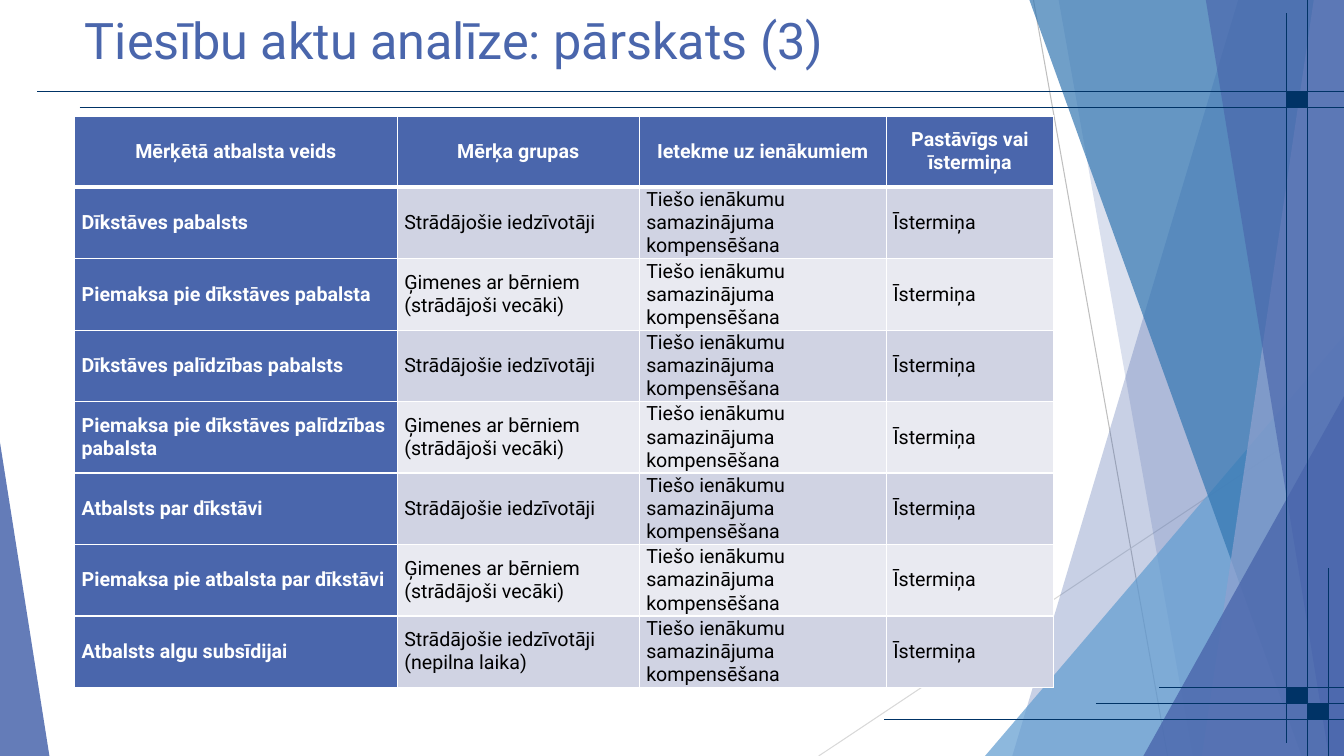
from dataclasses import dataclass

from lxml import etree
from pptx import Presentation
from pptx import util as u
from pptx.dml.color import RGBColor
from pptx.enum import shapes, text
from pptx.oxml.ns import qn


@dataclass(frozen=True)
class Theme:
    """Colours, type sizes and font of the deck."""
    blue: str = "4A66AC"
    pale_blue: str = "90A2CF"
    sky: str = "629DD1"
    ocean: str = "3477B2"
    navy: str = "003366"
    grey: str = "BFBFBF"
    light_grey: str = "D9D9D9"
    white: str = "FFFFFF"
    black: str = "000000"
    bands: tuple = ("D0D3E3", "E9EAF1")
    font: str = "Roboto"
    title_size: int = 36
    table_size: int = 14


THEME = Theme()
WIDTH, HEIGHT = 13.33, 7.5
HEADERS = ["Mērķētā atbalsta veids", "Mērķa grupas", "Ietekme uz ienākumiem", "Pastāvīgs vai īstermiņa"]
WORKERS = "Strādājošie iedzīvotāji"
FAMILIES = "Ģimenes ar bērniem (strādājoši vecāki)"
EFFECT = "Tiešo ienākumu samazinājuma kompensēšana"
DURATION = "Īstermiņa"
SUPPORT = [
    ("Dīkstāves pabalsts", WORKERS),
    ("Piemaksa pie dīkstāves pabalsta", FAMILIES),
    ("Dīkstāves palīdzības pabalsts", WORKERS),
    ("Piemaksa pie dīkstāves palīdzības pabalsta", FAMILIES),
    ("Atbalsts par dīkstāvi", WORKERS),
    ("Piemaksa pie atbalsta par dīkstāvi", FAMILIES),
    ("Atbalsts algu subsīdijai", "Strādājošie iedzīvotāji (nepilna laika)"),
]


def apply_format(target, values):
    """Set each attribute of the target from a dict."""
    for name, value in values.items():
        setattr(target, name, value)


def format_font(font, size, color, bold=False):
    """Apply the theme font with a size, colour and weight."""
    apply_format(font, {"name": THEME.font, "size": u.Pt(size), "bold": bold})
    font.color.rgb = RGBColor.from_string(color)


def fill_shape(shape, color, opacity=100):
    """Give a shape a plain fill of the given opacity and no shadow."""
    shape.shadow.inherit = False
    shape.fill.solid()
    shape.fill.fore_color.rgb = RGBColor.from_string(color)
    shape.line.fill.background()
    if opacity < 100:
        color_element = shape.fill._xPr.find(qn("a:solidFill"))[0]
        etree.SubElement(color_element, qn("a:alpha"), val=str(opacity * 1000))


def add_rule(group, start, end, color):
    """Draw a thin straight line between two points."""
    line = group.shapes.add_connector(shapes.MSO_CONNECTOR.STRAIGHT, *map(u.Inches, start + end))
    line.line.color.rgb = RGBColor.from_string(color)
    line.line.width = u.Pt(0.75)
    etree.SubElement(line._element.spPr, qn("a:effectLst"))


def add_facet(group, box, top_left, bottom_left, color, opacity):
    """Add a full-height facet that ends at the right edge of the box."""
    left, top, width, height = box
    right, bottom = left + width, top + height
    corners = [(top_left, top), (right, top), (right, bottom), (bottom_left, bottom)]
    points = [tuple(map(u.Inches, corner)) for corner in corners]
    builder = group.shapes.build_freeform(*points[0])
    builder.add_line_segments(points[1:], close=True)
    fill_shape(builder.convert_to_shape(), color, opacity)


def add_corner(group, box, width, height, peak, color, opacity):
    """Add a triangle in a bottom corner, with its peak at 0 (left) or 1 (right)."""
    left, top, box_width, box_height = box
    place = (left + peak * (box_width - width), top + box_height - height, width, height)
    shape = group.shapes.add_shape(shapes.MSO_SHAPE.ISOSCELES_TRIANGLE, *map(u.Inches, place))
    shape.adjustments[0] = peak
    fill_shape(shape, color, opacity)


def add_facets(slide, box):
    """Draw the translucent facets at the sides of the box."""
    left, top, width, height = box
    right, bottom = left + width, top + height
    group = slide.shapes.add_group_shape()
    add_rule(group, (10.25, top), (11.58, bottom), THEME.grey)
    add_rule(group, (right, 4.03), (8.12, bottom), THEME.light_grey)
    add_facet(group, box, 12.28, 10.04, THEME.blue, 30)
    add_facet(group, box, 10.5, 11.83, THEME.blue, 20)
    add_corner(group, box, 3.56, 4.17, 1, THEME.sky, 72)
    add_facet(group, box, 10.21, 12.91, THEME.ocean, 70)
    add_facet(group, box, 13.03, 11.92, THEME.pale_blue, 70)
    add_facet(group, box, 11.96, 13.18, THEME.blue, 65)
    add_corner(group, box, 1.99, 3.57, 1, THEME.blue, 80)
    add_corner(group, box, 0.49, 3.11, 0, THEME.blue, 85)


def add_grid_lines(slide, box):
    """Draw the navy rules and the squares where they cross."""
    left, top, width, height = box
    right, bottom = left + width, top + height
    group = slide.shapes.add_group_shape()
    for start, y in [(0.37, 0.91), (0.79, 1.07), (10.87, 6.98), (11.5, 6.82), (8.77, 7.14)]:
        add_rule(group, (left + start, top + y), (right, top + y), THEME.navy)
    for x, start, end in [(12.97, top, bottom), (12.76, 0.13, 7.37), (13.18, 5.64, bottom)]:
        add_rule(group, (left + x, start), (left + x, end), THEME.navy)
    for x, y in [(12.76, 0.91), (12.76, 6.82), (12.97, 6.98)]:
        place = map(u.Inches, (left + x, top + y, 0.21, 0.16))
        square = group.shapes.add_shape(shapes.MSO_SHAPE.RECTANGLE, *place)
        fill_shape(square, THEME.navy)
        square.line.color.rgb = RGBColor.from_string(THEME.navy)
        square.line.width = u.Pt(0.75)


def add_title(slide, box, words):
    """Place and format the title placeholder."""
    title = slide.shapes.title
    apply_format(title, dict(zip(("left", "top", "width", "height"), map(u.Inches, box))))
    frame = title.text_frame
    frame.text = words
    apply_format(frame, {"word_wrap": True, "vertical_anchor": text.MSO_ANCHOR.TOP,
                         "auto_size": text.MSO_AUTO_SIZE.NONE})
    paragraph = frame.paragraphs[0]
    paragraph.alignment = text.PP_ALIGN.LEFT
    format_font(paragraph.runs[0].font, THEME.title_size, THEME.blue)


def add_borders(cell, bottom_width):
    """Give a cell white borders with its own bottom width in points."""
    properties = cell._tc.get_or_add_tcPr()
    for side, width in (("L", 1), ("R", 1), ("T", 1), ("B", bottom_width)):
        line = etree.SubElement(properties, qn(f"a:ln{side}"), w=str(u.Pt(width)))
        fill = etree.SubElement(line, qn("a:solidFill"))
        etree.SubElement(fill, qn("a:srgbClr"), val=THEME.white)


def format_cell(cell, words, fill, is_header, is_label):
    """Write and style one table cell."""
    cell.text = words
    add_borders(cell, 3 if is_header else 1)
    cell.fill.solid()
    cell.fill.fore_color.rgb = RGBColor.from_string(fill)
    apply_format(cell, {"margin_left": u.Inches(0.07), "margin_right": u.Inches(0.07), "margin_top": 0,
                        "margin_bottom": 0, "vertical_anchor": text.MSO_ANCHOR.MIDDLE})
    paragraph = cell.text_frame.paragraphs[0]
    paragraph.alignment = text.PP_ALIGN.CENTER if is_header else text.PP_ALIGN.LEFT
    color = THEME.white if is_label else THEME.black
    format_font(paragraph.runs[0].font, THEME.table_size, color, is_label)


def add_support_table(slide, box, column_widths):
    """Add the overview of support types in equal rows."""
    rows = [HEADERS] + [[name, group, EFFECT, DURATION] for name, group in SUPPORT]
    table = slide.shapes.add_table(len(rows), len(HEADERS), *map(u.Inches, box)).table
    for column, width in zip(table.columns, column_widths):
        column.width = u.Inches(width)
    for row_index, row in enumerate(rows):
        for column_index, words in enumerate(row):
            is_header = row_index == 0
            is_label = is_header or column_index == 0
            fill = THEME.blue if is_label else THEME.bands[(row_index - 1) % 2]
            format_cell(table.cell(row_index, column_index), words, fill, is_header, is_label)


def main():
    """Build and save the presentation."""
    presentation = Presentation()
    apply_format(presentation, {"slide_width": u.Inches(WIDTH), "slide_height": u.Inches(HEIGHT)})
    slide = presentation.slides.add_slide(presentation.slide_layouts[5])
    page = (0, 0, WIDTH, HEIGHT)
    add_facets(slide, page)
    add_grid_lines(slide, page)
    add_title(slide, (0.74, 0.04, 9.4, 0.87), "Tiesību aktu analīze: pārskats (3)")
    add_support_table(slide, (0.74, 1.15, 9.71, 5.67), (3.2, 2.4, 2.45, 1.66))
    presentation.save("out.pptx")


if __name__ == "__main__":
    main()
